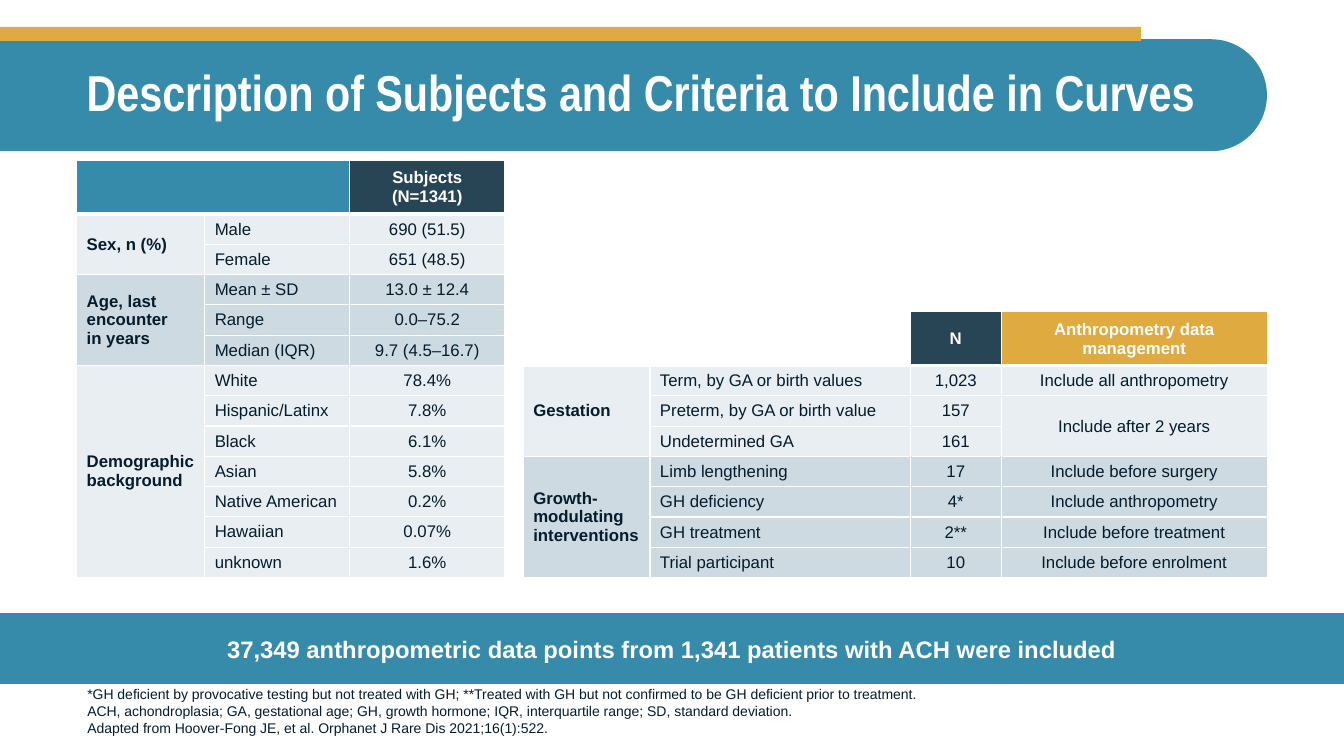
from lxml import etree
from pptx import Presentation
from pptx.dml.color import RGBColor
from pptx.enum.shapes import MSO_SHAPE
from pptx.enum.text import MSO_ANCHOR, PP_ALIGN
from pptx.oxml.ns import qn
from pptx.util import Pt

RECT = MSO_SHAPE.RECTANGLE
ROUND = MSO_SHAPE.ROUND_2_SAME_RECTANGLE
MID, LOW = MSO_ANCHOR.MIDDLE, MSO_ANCHOR.BOTTOM
LEFT, MIDDLE = PP_ALIGN.LEFT, PP_ALIGN.CENTER
TEAL, NAVY, GOLD = "368BAB", "274554", "DFAA40"
WHITE, INK, PALE, GREY = "FFFFFF", "051C2C", "E8EEF1", "CEDAE2"


def rgb(code):
    return RGBColor.from_string(code)


def write(frame, text, size=12, color=INK, bold=False, font="Arial",
          align=LEFT, anchor=MID, space=None):
    frame.word_wrap = True
    frame.vertical_anchor = anchor
    for i, line in enumerate(text.split("\n")):
        para = frame.add_paragraph() if i else frame.paragraphs[0]
        para.text = line
        para.alignment = align
        para.line_spacing = space
        for run in para.runs:
            run.font.size = Pt(size)
            run.font.name = font
            run.font.bold = bold
            run.font.color.rgb = rgb(color)
        for feed in para._p.findall(qn("a:br")):
            etree.SubElement(feed, qn("a:rPr"), sz=str(size * 100))


deck = Presentation()
deck.slide_width, deck.slide_height = Pt(960), Pt(540)
slide = deck.slides.add_slide(deck.slide_layouts[6])

# Title band, gold strip and message bar
bars = []
for kind, x, y, w, h, color in [
    (ROUND, 412.5, -384.5, 80, 905, TEAL),
    (RECT, 0, 19.25, 815, 10, GOLD),
    (RECT, 0, 438, 960, 50.5, TEAL),
]:
    bar = slide.shapes.add_shape(kind, Pt(x), Pt(y), Pt(w), Pt(h))
    bar.shadow.inherit = False
    bar.fill.solid()
    bar.fill.fore_color.rgb = rgb(color)
    bar.line.fill.background()
    bars.append(bar)
band, strip, message = bars
band.rotation = 270
band.adjustments[0], band.adjustments[1] = 0, 0.5
write(message.text_frame,
      "37,349 anthropometric data points from 1,341 patients with ACH were included",
      size=17, color=WHITE, bold=True, align=MIDDLE)

# Title and footnotes
title = slide.shapes.add_textbox(Pt(54.75), Pt(28), Pt(850), Pt(79.5))
write(title.text_frame, "Description of Subjects and Criteria to Include in Curves",
      size=36, color=WHITE, bold=True, font="Arial Narrow", space=0.9)
notes = slide.shapes.add_textbox(Pt(55.25), Pt(489), Pt(711), Pt(40.5))
write(notes.text_frame,
      "*GH deficient by provocative testing but not treated with GH; "
      "**Treated with GH but not confirmed to be GH deficient prior to treatment.\n"
      "ACH, achondroplasia; GA, gestational age; GH, growth hormone; "
      "IQR, interquartile range; SD, standard deviation.\n"
      "Adapted from Hoover‑Fong JE, et al. Orphanet J Rare Dis 2021;16(1):522.",
      size=10, anchor=LOW)

# Table content: position, column widths, heads, groups of rows
subjects = (54.75, 114.5, [91.5, 103.5, 111],
            [(None, TEAL), (None, TEAL), ("Subjects (N=1341)", NAVY)], [
    ("Sex, n (%)", PALE, [("Male", "690 (51.5)"), ("Female", "651 (48.5)")]),
    ("Age, last encounter\vin years", GREY, [
        ("Mean ± SD", "13.0 ± 12.4"),
        ("Range", "0.0–75.2"),
        ("Median (IQR)", "9.7 (4.5–16.7)")]),
    ("Demographic background", PALE, [
        ("White", "78.4%"),
        ("Hispanic/Latinx", "7.8%"),
        ("Black", "6.1%"),
        ("Asian", "5.8%"),
        ("Native American", "0.2%"),
        ("Hawaiian", "0.07%"),
        ("unknown", "1.6%")]),
])
criteria = (373.75, 222.75, [90.5, 186, 65, 190],
            [(None, WHITE), (None, WHITE), ("N", NAVY),
             ("Anthropometry data\vmanagement", GOLD)], [
    ("Gestation", PALE, [
        ("Term, by GA or birth values", "1,023", "Include all anthropometry"),
        ("Preterm, by GA or birth value", "157", "Include after 2 years"),
        ("Undetermined GA", "161", None)]),
    ("Growth-modulating interventions", GREY, [
        ("Limb lengthening", "17", "Include before surgery"),
        ("GH deficiency", "4*", "Include anthropometry"),
        ("GH treatment", "2**", "Include before treatment"),
        ("Trial participant", "10", "Include before enrolment")]),
])

# Tables
for x, y, widths, heads, groups in (subjects, criteria):
    rows, spans = [heads], [(0, 0, 0, 1)]
    for label, shade, items in groups:
        top = len(rows)
        spans.append((top, 0, top + len(items) - 1, 0))
        for i, item in enumerate(items):
            name = None if i else label
            rows.append([(text, shade) for text in (name, *item)])
            if item[-1] is None:
                spans.append((top + i - 1, len(item), top + i, len(item)))

    high = 36.4 + 20.6 * (len(rows) - 1)
    frame = slide.shapes.add_table(len(rows), len(widths), Pt(x), Pt(y),
                                   Pt(sum(widths)), Pt(high))
    grid = frame.table
    grid.horz_banding = False
    for col, width in zip(grid.columns, widths):
        col.width = Pt(width)

    for r, row in enumerate(rows):
        grid.rows[r].height = Pt(20.6 if r else 36.4)
        for c, (text, shade) in enumerate(row):
            cell = grid.cell(r, c)
            props = cell._tc.get_or_add_tcPr()
            for side in "LRTB":
                thick = (r, side) == (0, "B") or ((r, side) == (1, "T") and c != 1)
                line = etree.SubElement(props, qn("a:ln" + side),
                                        w=str(Pt(3 if thick else 1)))
                fill = etree.SubElement(line, qn("a:solidFill"))
                etree.SubElement(fill, qn("a:srgbClr"), val=WHITE)
            cell.fill.solid()
            cell.fill.fore_color.rgb = rgb(shade)
            cell.vertical_anchor = MID
            if r == 0:
                cell.margin_left = cell.margin_right = Pt(9.4)
                cell.margin_top = cell.margin_bottom = Pt(4.8)
            if text:
                write(cell.text_frame, text, color=INK if r else WHITE,
                      bold=r == 0 or c == 0,
                      align=MIDDLE if c > 1 else LEFT)
                body = cell.text_frame._txBody.bodyPr
                body.attrib.clear()

    for r1, c1, r2, c2 in spans:
        grid.cell(r1, c1).merge(grid.cell(r2, c2))

deck.save("out.pptx")
